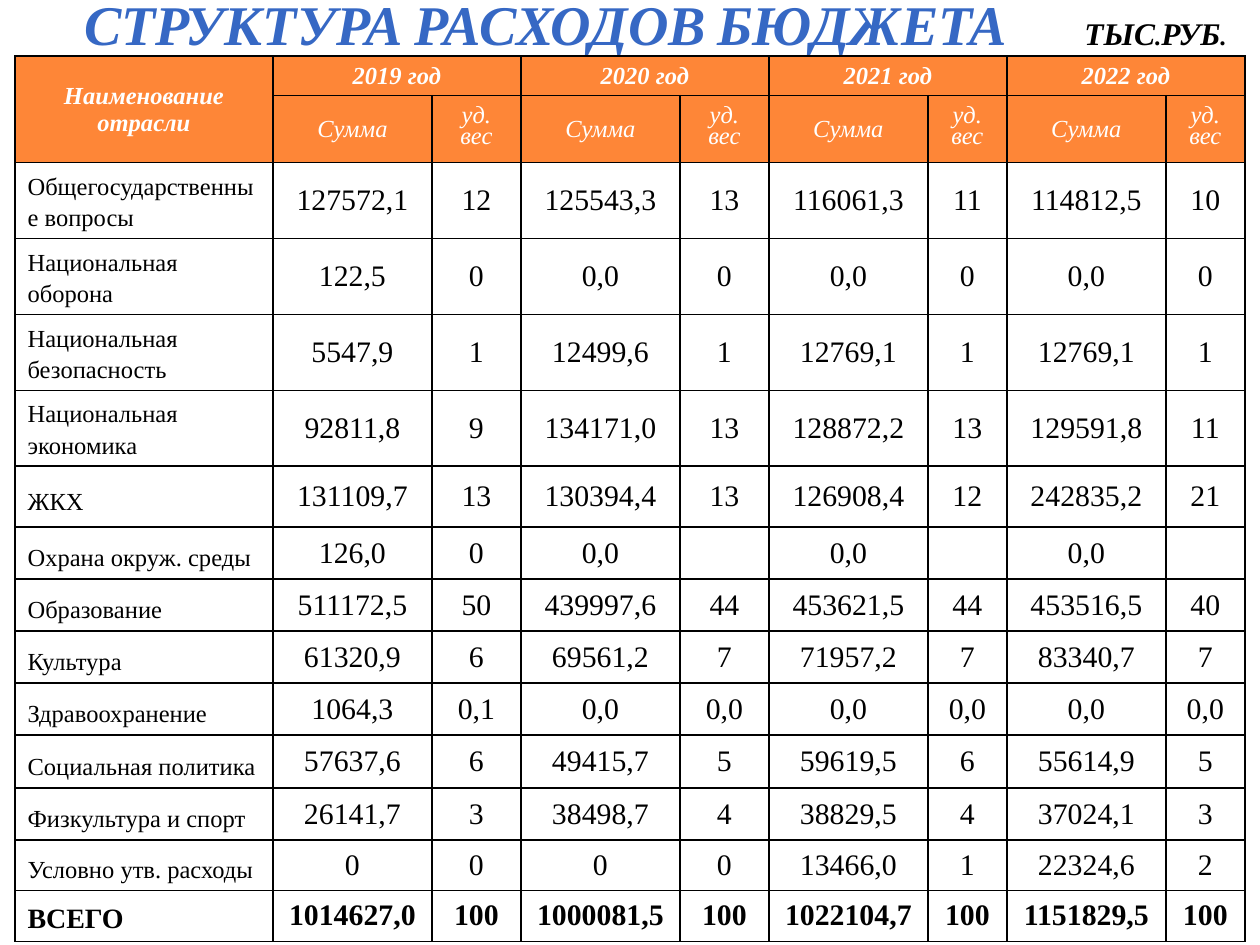
"""Build the budget expenditure structure slide."""
from dataclasses import dataclass
from typing import NamedTuple, Optional

from lxml.etree import SubElement
from pptx import Presentation
from pptx.dml.color import RGBColor
from pptx.enum.text import MSO_ANCHOR as Anchor, MSO_AUTO_SIZE as AutoSize, PP_ALIGN as Align
from pptx.oxml.ns import qn
from pptx.util import Emu, Pt

EMU_PER_PX = 914400 / 126


@dataclass(frozen=True)
class Theme:
    font: str = "Times New Roman"
    title: str = "3668C4"
    ink: str = "000000"
    header: str = "FE8637"
    header_ink: str = "FFFFFF"
    title_pt: int = 32
    unit_pt: int = 18
    label_pt: int = 14
    total_pt: int = 16
    value_pt: int = 17
    border_pt: int = 1


class Sector(NamedTuple):
    name: str
    values: tuple[str, ...]
    height: int
    leading: float = 21.6
    total: bool = False


def sector(name: str, values: str, height: int, **kw) -> Sector:
    return Sector(name, tuple(v.strip() for v in values.split("|")), height, **kw)


THEME = Theme()
YEARS = (2019, 2020, 2021, 2022)
COL_WIDTHS = (258, 159, 89, 159, 89, 159, 79, 159, 79)
HEADER_HEIGHTS = (39, 67)
SECTORS = (
    sector("Общегосударственные вопросы",
           "127572,1|12|125543,3|13|116061,3|11|114812,5|10", 75, leading=18),
    sector("Национальная оборона", "122,5|0|0,0|0|0,0|0|0,0|0", 76, leading=18),
    sector("Национальная безопасность",
           "5547,9|1|12499,6|1|12769,1|1|12769,1|1", 76, leading=18),
    sector("Национальная экономика",
           "92811,8|9|134171,0|13|128872,2|13|129591,8|11", 75, leading=18),
    sector("ЖКХ", "131109,7|13|130394,4|13|126908,4|12|242835,2|21", 61),
    sector("Охрана окруж. среды", "126,0|0|0,0||0,0||0,0|", 52),
    sector("Образование", "511172,5|50|439997,6|44|453621,5|44|453516,5|40", 52),
    sector("Культура", "61320,9|6|69561,2|7|71957,2|7|83340,7|7", 52),
    sector("Здравоохранение", "1064,3|0,1|0,0|0,0|0,0|0,0|0,0|0,0", 52),
    sector("Социальная политика", "57637,6|6|49415,7|5|59619,5|6|55614,9|5", 53),
    sector("Физкультура и спорт", "26141,7|3|38498,7|4|38829,5|4|37024,1|3", 52),
    sector("Условно утв. расходы", "0|0|0|0|13466,0|1|22324,6|2", 50),
    sector("ВСЕГО", "1014627,0|100|1000081,5|100|1022104,7|100|1151829,5|100", 51, total=True),
)


def px(n: int) -> Emu:
    return Emu(round(n * EMU_PER_PX))


def add_text(p, text: str, *, size: int, color: str, bold: bool = False, italic: bool = False,
             align: Align = Align.CENTER, leading: Optional[float] = None):
    p.alignment = align
    if leading:
        p.line_spacing = Pt(leading)
    r = p.add_run()
    r.text = text
    f = r.font
    f.name, f.size, f.bold, f.italic = THEME.font, Pt(size), bold, italic
    f.color.rgb = RGBColor.from_string(color)
    return r


def style_cell(cell, fill: Optional[str] = None) -> None:
    tc_pr = cell._tc.get_or_add_tcPr()
    for side in ("lnL", "lnR", "lnT", "lnB"):
        ln = SubElement(tc_pr, qn(f"a:{side}"), w=str(Pt(THEME.border_pt)))
        SubElement(SubElement(ln, qn("a:solidFill")), qn("a:srgbClr"), val=THEME.ink)
    cell.vertical_anchor = Anchor.MIDDLE
    if fill:
        cell.fill.solid()
        cell.fill.fore_color.rgb = RGBColor.from_string(fill)
    else:
        cell.fill.background()


def add_title(s) -> None:
    sp = s.shapes.title
    sp.left, sp.top, sp.width, sp.height = px(66), px(13), px(1179), px(50)
    tf = sp.text_frame
    tf.auto_size, tf.vertical_anchor, tf.word_wrap = AutoSize.NONE, Anchor.BOTTOM, True
    p = tf.paragraphs[0]
    style = dict(size=THEME.title_pt, color=THEME.title, bold=True, italic=True)
    heading = add_text(p, "СТРУКТУРА РАСХОДОВ БЮДЖЕТА", **style)
    gap = add_text(p, " ", **style)
    unit = add_text(p, "ТЫС.РУБ.", **{**style, "size": THEME.unit_pt, "color": THEME.ink})
    for r in (heading, gap, unit):
        r.font._element.set("cap", "small")
    gap.font._element.set("spc", "1900")


def fill_header(table) -> None:
    style = dict(size=THEME.label_pt, color=THEME.header_ink, italic=True)

    def put(row: int, col: int, text: str, **kw) -> None:
        add_text(table.cell(row, col).text_frame.paragraphs[0], text, **style, **kw)

    table.cell(0, 0).merge(table.cell(1, 0))
    put(0, 0, "Наименование отрасли", bold=True)
    for i, year in enumerate(YEARS):
        col = 1 + 2 * i
        table.cell(0, col).merge(table.cell(0, col + 1))
        put(0, col, f"{year} год", bold=True)
        put(1, col, "Сумма")
        put(1, col + 1, "уд. вес", leading=12)


def fill_sector(table, row: int, item: Sector) -> None:
    add_text(table.cell(row, 0).text_frame.paragraphs[0], item.name, color=THEME.ink,
             size=THEME.total_pt if item.total else THEME.label_pt,
             bold=item.total, align=Align.LEFT, leading=item.leading)
    for col, value in enumerate(item.values, 1):
        if value:
            add_text(table.cell(row, col).text_frame.paragraphs[0], value,
                     size=THEME.value_pt, color=THEME.ink, bold=item.total)


def add_budget_table(s) -> None:
    heights = HEADER_HEIGHTS + tuple(item.height for item in SECTORS)
    table = s.shapes.add_table(len(heights), len(COL_WIDTHS), px(15), px(56),
                               px(sum(COL_WIDTHS)), px(sum(heights))).table
    table.first_row = table.horz_banding = False
    for column, width in zip(table.columns, COL_WIDTHS):
        column.width = px(width)
    for i, (row, height) in enumerate(zip(table.rows, heights)):
        row.height = px(height)
        for cell in row.cells:
            style_cell(cell, THEME.header if i < len(HEADER_HEIGHTS) else None)
    fill_header(table)
    for row, item in enumerate(SECTORS, len(HEADER_HEIGHTS)):
        fill_sector(table, row, item)


def main() -> None:
    prs = Presentation()
    prs.slide_width, prs.slide_height = px(1260), px(945)
    s = prs.slides.add_slide(prs.slide_layouts[5])
    add_title(s)
    add_budget_table(s)
    prs.save("out.pptx")


if __name__ == "__main__":
    main()
